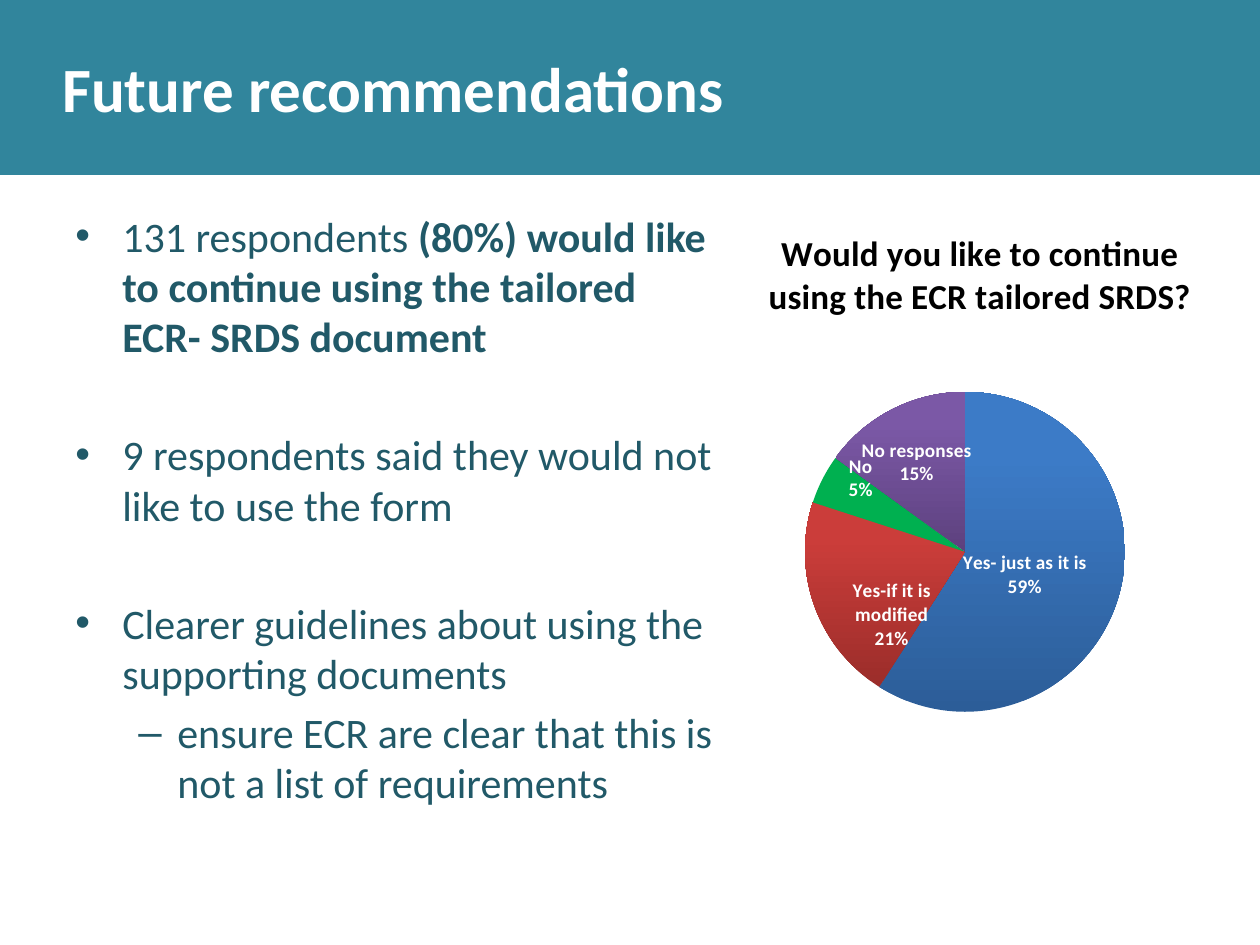
from dataclasses import dataclass
from lxml import etree
from pptx import Presentation
from pptx.chart.data import CategoryChartData
from pptx.dml.color import RGBColor
from pptx.enum.chart import XL_CHART_TYPE, XL_LABEL_POSITION
from pptx.enum.shapes import MSO_SHAPE
from pptx.enum.text import MSO_ANCHOR, PP_ALIGN
from pptx.oxml.ns import qn
from pptx.util import Pt

PIE = XL_CHART_TYPE.PIE
CENTER = XL_LABEL_POSITION.CENTER
RECTANGLE = MSO_SHAPE.RECTANGLE
MIDDLE = MSO_ANCHOR.MIDDLE
LEFT = PP_ALIGN.LEFT
EMU_PER_PX = 914400 / 126


@dataclass(frozen=True)
class Theme:
    font: str = "Calibri"
    band: str = "31859C"
    body: str = "215968"
    light: str = "FFFFFF"
    dark: str = "000000"
    heading_size: int = 36
    body_size: int = 24
    chart_title_size: int = 20
    label_size: int = 11
    chart_size: int = 10


def emu(*lengths):
    return [round(length * EMU_PER_PX) for length in lengths]


def add_layout(parent, position, **values):
    layout = etree.Element(qn("c:layout"))
    manual = etree.SubElement(layout, qn("c:manualLayout"))
    for name, value in values.items():
        etree.SubElement(manual, qn(f"c:{name}")).set("val", str(value))
    parent.insert(position, layout)


class SlideBuilder:
    """Holds the theme and the current page, and adds elements to it."""

    def __init__(self, page, theme):
        self.page = page
        self.theme = theme

    def style(self, font, size, color, bold=False):
        font.name = self.theme.font
        font.size = Pt(size)
        font.bold = bold
        font.color.rgb = RGBColor.from_string(color)

    def indent(self, para, margin, hanging=0):
        margin, hanging = emu(margin, hanging)
        properties = para._p.get_or_add_pPr()
        properties.set("marL", str(margin))
        properties.set("indent", str(-hanging))
        return properties

    def header(self, text, left, top, width, height):
        band = self.page.shapes.add_shape(RECTANGLE, *emu(left, top, width, height))
        band.shadow.inherit = False
        band.fill.solid()
        band.fill.fore_color.rgb = RGBColor.from_string(self.theme.band)
        band.line.fill.background()
        frame = band.text_frame
        frame.text = text
        frame.vertical_anchor = MIDDLE
        para = frame.paragraphs[0]
        para.alignment = LEFT
        self.indent(para, 50)
        self.style(para.runs[0].font, self.theme.heading_size, self.theme.light, True)

    def bullets(self, items, left, top, width, height):
        frame = self.page.shapes.add_textbox(*emu(left, top, width, height)).text_frame
        frame.word_wrap = True
        for index, (level, space, spans) in enumerate(items):
            para = frame.paragraphs[0] if index == 0 else frame.add_paragraph()
            para.level = level
            para.space_before = Pt(space)
            mark, margin, hanging = (("•", 47, 47), ("–", 102, 39))[level]
            properties = self.indent(para, margin, hanging)
            etree.SubElement(properties, qn("a:buFont")).set("typeface", "Arial")
            etree.SubElement(properties, qn("a:buChar")).set("char", mark)
            for text, bold in spans:
                span = para.add_run()
                span.text = text
                self.style(span.font, self.theme.body_size, self.theme.body, bold)

    def pie(self, title, slices, plot_box, left, top, width, height):
        data = CategoryChartData()
        data.categories = [name for name, *_ in slices]
        data.add_series(title, [value for _, value, *_ in slices])
        box = emu(left, top, width, height)
        chart = self.page.shapes.add_chart(PIE, *box, data).chart
        self.style(chart.font, self.theme.chart_size, self.theme.dark)
        chart.has_legend = False
        chart.has_title = True
        chart.chart_title.include_in_layout = False
        chart.chart_title.text_frame.text = title
        title_span = chart.chart_title.text_frame.paragraphs[0].runs[0]
        self.style(title_span.font, self.theme.chart_title_size, self.theme.dark, True)

        plot = chart.plots[0]
        plot.vary_by_categories = True
        plot_area = plot._element.getparent()
        for old in plot_area.findall(qn("c:layout")):
            plot_area.remove(old)
        x, y, w, h = plot_box
        add_layout(
            plot_area, 0, layoutTarget="inner", xMode="edge", yMode="edge",
            x=round((x - left) / width, 4), y=round((y - top) / height, 4),
            w=round(w / width, 4), h=round(h / height, 4),
        )
        series = plot.series[0]
        for index, (_, _, colors, shift) in enumerate(slices):
            point = series.points[index]
            self.slice_fill(point.format.fill, colors)
            self.style(point.data_label.font, self.theme.label_size, self.theme.light, True)
            point.data_label.position = CENTER
            label = series._element.xpath(f"c:dLbls/c:dLbl[c:idx/@val='{index}']")[0]
            for flag, shown in (("showVal", 0), ("showCatName", 1), ("showPercent", 1)):
                label.find(qn(f"c:{flag}")).set("val", str(shown))
            etree.SubElement(label, qn("c:separator")).text = "\n"
            add_layout(label, 1, x=round(shift[0] / width, 4), y=round(shift[1] / height, 4))

    def slice_fill(self, fill, colors):
        if len(colors) == 1:
            fill.solid()
            fill.fore_color.rgb = RGBColor.from_string(colors[0])
            return
        fill.gradient()
        fill.gradient_angle = 90
        for stop, color, position in zip(fill.gradient_stops, colors, (0, 0.8)):
            stop.color.rgb = RGBColor.from_string(color)
            stop.position = position


def main():
    deck = Presentation()
    deck.slide_width, deck.slide_height = emu(1260, 945)
    builder = SlideBuilder(deck.slides.add_slide(deck.slide_layouts[6]), Theme())
    builder.header("Future recommendations", 0, 0, 1260, 175)

    tight, wide = 4.8, 38.6
    points = [
        (0, tight, [
            ("131 respondents ", False),
            ("(80%) would like to continue using the tailored ECR- SRDS document", True),
        ]),
        (0, wide, [("9 respondents said they would not like to use the form", False)]),
        (0, wide, [("Clearer guidelines about using the supporting documents", False)]),
        (1, tight, [("ensure ECR are clear that this is not a list of requirements", False)]),
    ]
    builder.bullets(points, 63, 204, 667, 698)

    slices = [
        ("Yes- just as it is", 59, ("2C5D98", "3C7BC7"), (-17, 1)),
        ("Yes-if it is modified", 21, ("9B2D2A", "CB3D3A"), (2, 36)),
        ("No", 5, ("00B050",), (-33, -37)),
        ("No responses", 15, ("5D417E", "7B58A6"), (-12, -18)),
    ]
    question = "Would you like to continue using the ECR tailored SRDS?"
    builder.pie(question, slices, (805, 392, 320, 320), 679, 204, 602, 543)
    deck.save("out.pptx")


if __name__ == "__main__":
    main()
